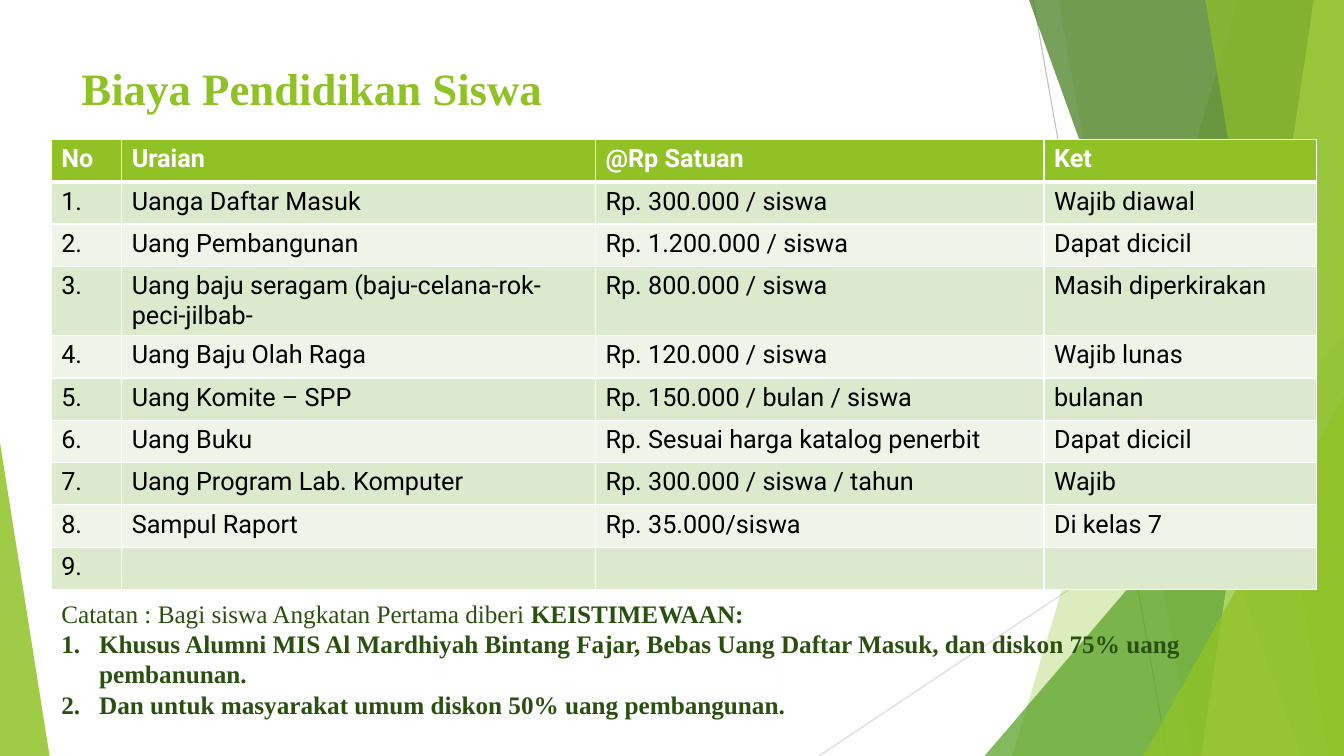
from lxml import etree
from pptx import Presentation, util as u
from pptx.dml.color import RGBColor
from pptx.enum import shapes, text
from pptx.oxml import ns

COLORS = {
    "white": "FFFFFF", "black": "000000", "gray": "BFBFBF", "pale_gray": "D9D9D9",
    "lime": "90C226", "green": "54A021", "forest": "3F7819", "light": "C0E474",
    "note": "2A5010", "band_odd": "DBE9CD", "band_even": "EEF4E8",
}
COLS, ROWS = 160, 90
SERIF, SANS = "Times New Roman", "Roboto"

FEES = [
    ("No", "Uraian", "@Rp Satuan", "Ket"),
    ("1.", "Uanga Daftar Masuk", "Rp. 300.000 / siswa", "Wajib diawal"),
    ("2.", "Uang Pembangunan", "Rp. 1.200.000 / siswa", "Dapat dicicil"),
    ("3.", "Uang baju seragam (baju-celana-rok-peci-jilbab-", "Rp. 800.000 / siswa",
     "Masih diperkirakan"),
    ("4.", "Uang Baju Olah Raga", "Rp. 120.000 / siswa", "Wajib lunas"),
    ("5.", "Uang Komite – SPP", "Rp. 150.000 / bulan / siswa", "bulanan"),
    ("6.", "Uang Buku", "Rp. Sesuai harga katalog penerbit", "Dapat dicicil"),
    ("7.", "Uang Program Lab. Komputer", "Rp. 300.000 / siswa / tahun", "Wajib"),
    ("8.", "Sampul Raport", "Rp. 35.000/siswa", "Di kelas 7"),
    ("9.", "", "", ""),
]
NOTES = [
    (False, [("Catatan : Bagi siswa Angkatan Pertama diberi ", False), ("KEISTIMEWAAN:", True)]),
    (True, [("Khusus Alumni MIS Al Mardhiyah Bintang Fajar, Bebas Uang Daftar Masuk, "
             "dan diskon 75% uang pembanunan.", True)]),
    (True, [("Dan untuk masyarakat umum diskon 50% uang pembangunan.", True)]),
]


class Deck:
    def __init__(self):
        self.prs = Presentation()
        self.prs.slide_width, self.prs.slide_height = u.Inches(13.333), u.Inches(7.5)
        self.s = self.prs.slides.add_slide(self.prs.slide_layouts[1])

    def x(self, cols):
        return u.Emu(round(self.prs.slide_width * cols / COLS))

    def y(self, rows):
        return u.Emu(round(self.prs.slide_height * rows / ROWS))

    def box(self, left, top, width, height):
        return self.x(left), self.y(top), self.x(width), self.y(height)

    def rgb(self, name):
        return RGBColor.from_string(COLORS[name])

    def paint(self, sp, color, opacity):
        sp.shadow.inherit = False
        sp.line.fill.background()
        sp.fill.solid()
        sp.fill.fore_color.rgb = self.rgb(color)
        clr = sp.fill._xPr.find(".//" + ns.qn("a:srgbClr"))
        etree.SubElement(clr, ns.qn("a:alpha"), val=str(opacity * 1000))

    def line(self, start, end, color):
        sp = self.s.shapes.add_connector(
            shapes.MSO_CONNECTOR.STRAIGHT, self.x(start[0]), self.y(start[1]),
            self.x(end[0]), self.y(end[1]))
        sp.line.color.rgb = self.rgb(color)
        sp.line.width = u.Pt(0.75)
        etree.SubElement(sp._element.spPr, ns.qn("a:effectLst"))

    def ribbon(self, top, bottom, color, opacity):
        builder = self.s.shapes.build_freeform(self.x(top), 0)
        corners = [(COLS, 0), (COLS, ROWS), (bottom, ROWS)]
        builder.add_line_segments([(self.x(c), self.y(r)) for c, r in corners])
        self.paint(builder.convert_to_shape(), color, opacity)

    def triangle(self, left, top, width, apex, color, opacity):
        sp = self.s.shapes.add_shape(
            shapes.MSO_SHAPE.ISOSCELES_TRIANGLE, *self.box(left, top, width, ROWS - top))
        sp.adjustments[0] = apex
        self.paint(sp, color, opacity)

    def run(self, p, words, font, size, color, bold):
        r = p.add_run()
        r.text = words
        r.font.name, r.font.size, r.font.bold = font, u.Pt(size), bold
        r.font.color.rgb = self.rgb(color)

    def placeholder(self, index, area, anchor):
        sp = self.s.placeholders[index]
        sp.left, sp.top, sp.width, sp.height = self.box(*area)
        self.s.shapes._spTree.append(sp._element)
        tf = sp.text_frame
        tf.word_wrap, tf.auto_size, tf.vertical_anchor = True, text.MSO_AUTO_SIZE.NONE, anchor
        return tf

    def title(self, words, area):
        p = self.placeholder(0, area, text.MSO_ANCHOR.MIDDLE).paragraphs[0]
        p.alignment = text.PP_ALIGN.LEFT
        self.run(p, words, SERIF, 32, "lime", True)

    def notes(self, items, area):
        tf = self.placeholder(1, area, text.MSO_ANCHOR.TOP)
        for i, (numbered, runs) in enumerate(items):
            p = tf.add_paragraph() if i else tf.paragraphs[0]
            p.space_before = u.Pt(0)
            pPr = p._p.get_or_add_pPr()
            indent = self.x(4.5) if numbered else 0
            pPr.set("marL", str(indent))
            pPr.set("indent", str(-indent))
            if numbered:
                etree.SubElement(pPr, ns.qn("a:buFont"), typeface="+mj-lt")
                etree.SubElement(pPr, ns.qn("a:buAutoNum"), type="arabicPeriod")
            else:
                etree.SubElement(pPr, ns.qn("a:buNone"))
            for words, bold in runs:
                self.run(p, words, SERIF, 18, "note", bold)

    def borders(self, cell, widths):
        tcPr = cell._tc.get_or_add_tcPr()
        for i, (side, width) in enumerate(zip("LRTB", widths)):
            ln = etree.Element(ns.qn("a:ln" + side), w=str(u.Pt(width)))
            fill = etree.SubElement(ln, ns.qn("a:solidFill"))
            etree.SubElement(fill, ns.qn("a:srgbClr"), val=COLORS["white"])
            tcPr.insert(i, ln)

    def table(self, rows, left, top, widths, row_height):
        area = self.box(left, top, sum(widths), row_height * len(rows))
        tbl = self.s.shapes.add_table(len(rows), len(widths), *area).table
        for col, width in zip(tbl.columns, widths):
            col.width = self.x(width)
        for i, values in enumerate(rows):
            tbl.rows[i].height = self.y(row_height)
            head = i == 0
            fill = "lime" if head else "band_odd" if i % 2 else "band_even"
            for j, words in enumerate(values):
                cell = tbl.cell(i, j)
                cell.fill.solid()
                cell.fill.fore_color.rgb = self.rgb(fill)
                self.borders(cell, (1, 1, 3 if i == 1 else 1, 3 if head else 1))
                if words:
                    self.run(cell.text_frame.paragraphs[0], words, SANS, 18,
                             "white" if head else "black", head)


def main():
    deck = Deck()
    deck.line((123, 0), (139, ROWS), "gray")
    deck.line((COLS, 48.4), (97.5, ROWS), "pale_gray")
    deck.ribbon(147.4, 120.5, "lime", 30)
    deck.ribbon(126, 142, "lime", 20)
    deck.triangle(117.2, 40, 42.8, 1, "green", 72)
    deck.ribbon(122.5, 154.9, "forest", 70)
    deck.ribbon(156.4, 143, "light", 70)
    deck.ribbon(143.5, 158.2, "lime", 65)
    deck.triangle(136.1, 47.2, 23.9, 1, "lime", 80)
    deck.triangle(0, 52.7, 5.9, 0, "lime", 85)
    deck.title("Biaya Pendidikan Siswa", (8.5, 6, 58.8, 8.9))
    deck.table(FEES, 6.1, 16.6, (8.4, 56.4, 53.4, 32.4), 5.04)
    deck.notes(NOTES, (6.1, 70.6, 150.6, 17.4))
    deck.prs.save("out.pptx")


if __name__ == "__main__":
    main()
